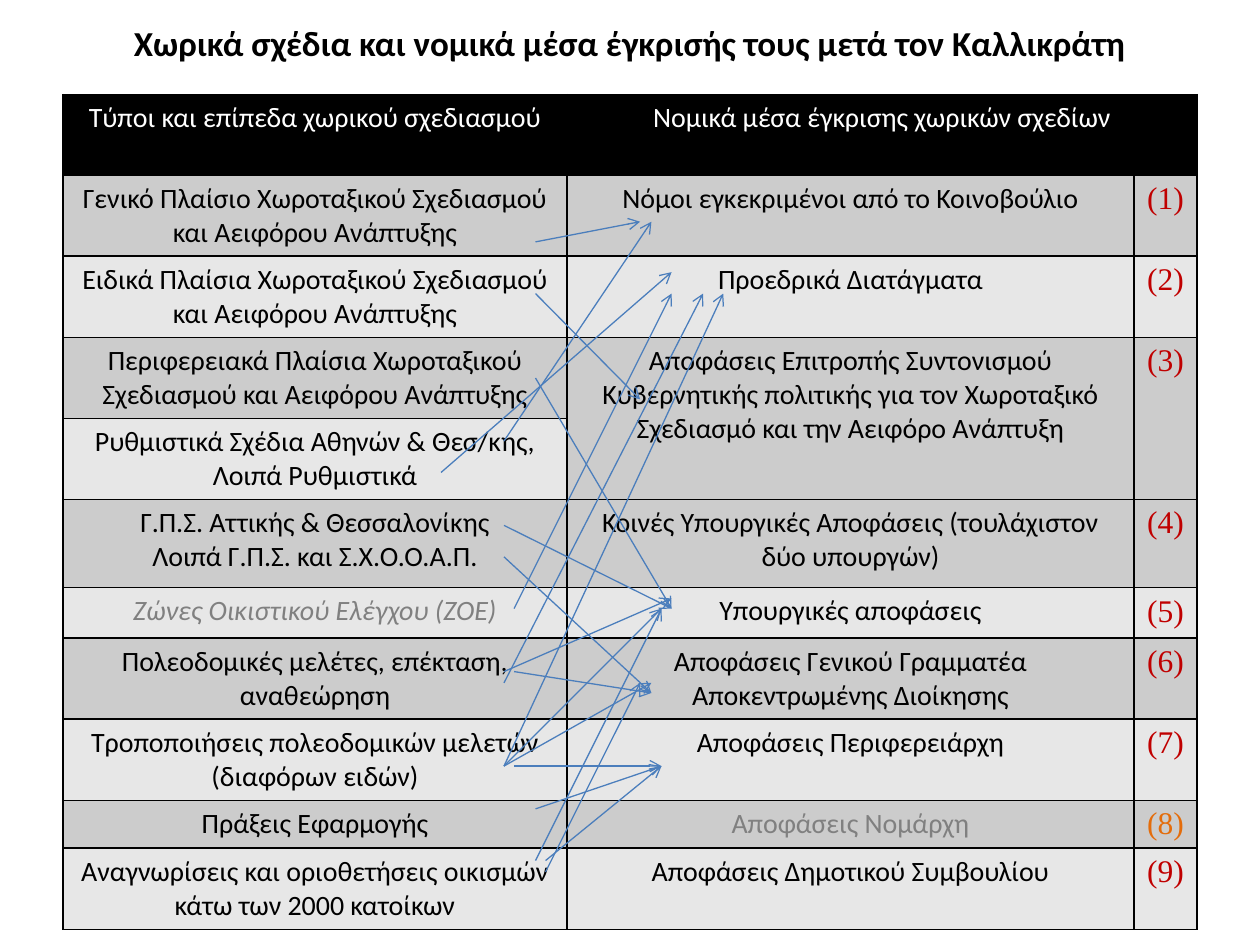
import pptx
import pptx.dml.color
import pptx.enum.shapes
import pptx.enum.text
import pptx.oxml
import pptx.oxml.ns
import pptx.util
from pptx.util import Inches

BLACK, WHITE, GREY = "000000", "FFFFFF", "808080"
RED, ORANGE = "C00000", "E46C0A"
BANDS = ("E7E7E7", "CCCCCC")

COLUMN_WIDTHS = (4, 4.5, 0.5)
ROW_HEIGHTS = (0.64,) * 5 + (0.7, 0.4, 0.64, 0.64, 0.38, 0.64)

HEADINGS = ("Τύποι και επίπεδα χωρικού σχεδιασμού", "Νομικά μέσα έγκρισης χωρικών σχεδίων")

PLAN_TYPES = (
    "Γενικό Πλαίσιο Χωροταξικού Σχεδιασμού και Αειφόρου Ανάπτυξης",
    "Ειδικά Πλαίσια Χωροταξικού Σχεδιασμού και Αειφόρου Ανάπτυξης",
    "Περιφερειακά Πλαίσια Χωροταξικού Σχεδιασμού και Αειφόρου Ανάπτυξης",
    "Ρυθμιστικά Σχέδια Αθηνών & Θεσ/κης,\nΛοιπά Ρυθμιστικά",
    "Γ.Π.Σ. Αττικής & Θεσσαλονίκης\nΛοιπά Γ.Π.Σ. και Σ.Χ.Ο.Ο.Α.Π.",
    "Ζώνες Οικιστικού Ελέγχου (ZOE)",
    "Πολεοδομικές μελέτες, επέκταση, αναθεώρηση",
    "Τροποποιήσεις πολεοδομικών μελετών (διαφόρων ειδών)",
    "Πράξεις Εφαρμογής",
    "Αναγνωρίσεις και οριοθετήσεις οικισμών κάτω των 2000 κατοίκων",
)
ABOLISHED_PLAN = 5

INSTRUMENTS = (
    "Νόμοι εγκεκριμένοι από το Κοινοβούλιο",
    "Προεδρικά Διατάγματα",
    "Αποφάσεις Επιτροπής Συντονισμού Κυβερνητικής πολιτικής για τον Χωροταξικό "
    "Σχεδιασμό και την Αειφόρο Ανάπτυξη",
    "Κοινές Υπουργικές Αποφάσεις (τουλάχιστον δύο υπουργών)",
    "Υπουργικές αποφάσεις",
    "Αποφάσεις Γενικού Γραμματέα Αποκεντρωμένης Διοίκησης",
    "Αποφάσεις Περιφερειάρχη",
    "Αποφάσεις Νομάρχη",
    "Αποφάσεις Δημοτικού Συμβουλίου",
)
INSTRUMENT_ROWS = (1, 2, 3, 5, 6, 7, 8, 9, 10)
ABOLISHED_INSTRUMENT = 8

APPROVALS = (
    ((4.25, 1.92), (5.08, 1.76)),
    ((4.25, 2.33), (5.08, 3.17)),
    ((4.25, 3), (5.33, 4.83)),
    ((4, 3.5), (5.17, 1.76)),
    ((3.5, 3.75), (5.33, 2.16)),
    ((4, 4.17), (5.33, 4.83)),
    ((4, 4.42), (5.17, 5.5)),
    ((4.08, 4.83), (5.33, 2.33)),
    ((4, 5.33), (5.33, 4.75)),
    ((4.08, 5.33), (5.17, 5.5)),
    ((4.33, 6.92), (5.08, 5.42)),
    ((4.33, 6.83), (5.25, 6.08)),
    ((4, 5.42), (5.58, 2.33)),
    ((4.25, 6.42), (5.25, 6.08)),
    ((4, 6.08), (5.74, 2.33)),
    ((4, 6.08), (5.25, 4.83)),
    ((4, 6.08), (5.17, 5.42)),
    ((4.25, 6.83), (5.25, 4.83)),
    ((4.08, 6.08), (5.25, 6.08)),
)


def rgb(code):
    """Return the colour for a hex string."""
    return pptx.dml.color.RGBColor.from_string(code)


def add_element(parent, tag, **attributes):
    """Append a drawing element and return it."""
    element = pptx.oxml.parse_xml(f"<{tag} {pptx.oxml.ns.nsdecls('a')}/>")
    for key, value in attributes.items():
        element.set(key, value)
    parent.append(element)
    return element


class SlideBuilder:
    """Holds the style and the slide being built."""

    font = "Calibri"
    number_font = "Times New Roman"
    arrow_color = "4B7EBC"

    def __init__(self, slide):
        """Keep the current slide."""
        self.slide = slide

    def label(self, frame, text, size=16, color=BLACK, font=None, bold=False, italic=False):
        """Fill a text frame with centred paragraphs."""
        frame.text = text
        for paragraph in frame.paragraphs:
            paragraph.alignment = pptx.enum.text.PP_ALIGN.CENTER
            paragraph.font.name = font or self.font
            paragraph.font.size = pptx.util.Pt(size)
            paragraph.font.bold = bold
            paragraph.font.italic = italic
            paragraph.font.color.rgb = rgb(color)

    def title(self, text):
        """Place and format the slide title."""
        title = self.slide.shapes.title
        title.left, title.top = Inches(0.5), Inches(0)
        title.width, title.height = Inches(9), Inches(0.67)
        title.text_frame.vertical_anchor = pptx.enum.text.MSO_ANCHOR.MIDDLE
        self.label(title.text_frame, text, size=20, bold=True)

    def grid(self, left, top, widths, heights):
        """Add a bordered table with banded rows under a black header."""
        table = self.slide.shapes.add_table(
            len(heights), len(widths), Inches(left), Inches(top),
            Inches(sum(widths)), Inches(sum(heights))).table
        table.first_row = table.horz_banding = False
        for column, width in zip(table.columns, widths):
            column.width = Inches(width)
        for index, (row, height) in enumerate(zip(table.rows, heights)):
            row.height = Inches(height)
            for cell in row.cells:
                self.borders(cell)
                cell.fill.solid()
                cell.fill.fore_color.rgb = rgb(BANDS[index % 2] if index else BLACK)
        return table

    def borders(self, cell):
        """Draw a thin black line on every side of a cell."""
        properties = cell._tc.get_or_add_tcPr()
        for side in ("lnL", "lnR", "lnT", "lnB"):
            line = add_element(properties, f"a:{side}", w=str(pptx.util.Pt(1)))
            add_element(add_element(line, "a:solidFill"), "a:srgbClr", val=BLACK)

    def arrow(self, start, end):
        """Draw a thin arrow between two points."""
        arrow = self.slide.shapes.add_connector(
            pptx.enum.shapes.MSO_CONNECTOR.STRAIGHT,
            *(Inches(length) for length in (*start, *end)))
        arrow.line.color.rgb = rgb(self.arrow_color)
        arrow.line.width = pptx.util.Pt(0.75)
        add_element(arrow.line._get_or_add_ln(), "a:tailEnd", type="arrow")
        add_element(arrow._element.spPr, "a:effectLst")


def main():
    """Build and save the slide."""
    deck = pptx.Presentation()
    deck.slide_width, deck.slide_height = Inches(10), Inches(7.5)
    builder = SlideBuilder(deck.slides.add_slide(deck.slide_layouts[5]))
    builder.title("Χωρικά σχέδια και νομικά μέσα έγκρισής τους μετά τον Καλλικράτη")

    table = builder.grid(0.5, 0.75, COLUMN_WIDTHS, ROW_HEIGHTS)
    table.cell(0, 1).merge(table.cell(0, 2))
    for column in (1, 2):
        table.cell(3, column).merge(table.cell(4, column))

    for column, heading in enumerate(HEADINGS):
        builder.label(table.cell(0, column).text_frame, heading, color=WHITE)
    for index, plan in enumerate(PLAN_TYPES):
        abolished = index == ABOLISHED_PLAN
        builder.label(table.cell(index + 1, 0).text_frame, plan,
                      color=GREY if abolished else BLACK, italic=abolished)
    for number, (row, instrument) in enumerate(zip(INSTRUMENT_ROWS, INSTRUMENTS), 1):
        abolished = number == ABOLISHED_INSTRUMENT
        builder.label(table.cell(row, 1).text_frame, instrument,
                      color=GREY if abolished else BLACK)
        builder.label(table.cell(row, 2).text_frame, f"({number})", size=18,
                      color=ORANGE if abolished else RED, font=builder.number_font)

    for start, end in APPROVALS:
        builder.arrow(start, end)
    deck.save("out.pptx")


if __name__ == "__main__":
    main()
